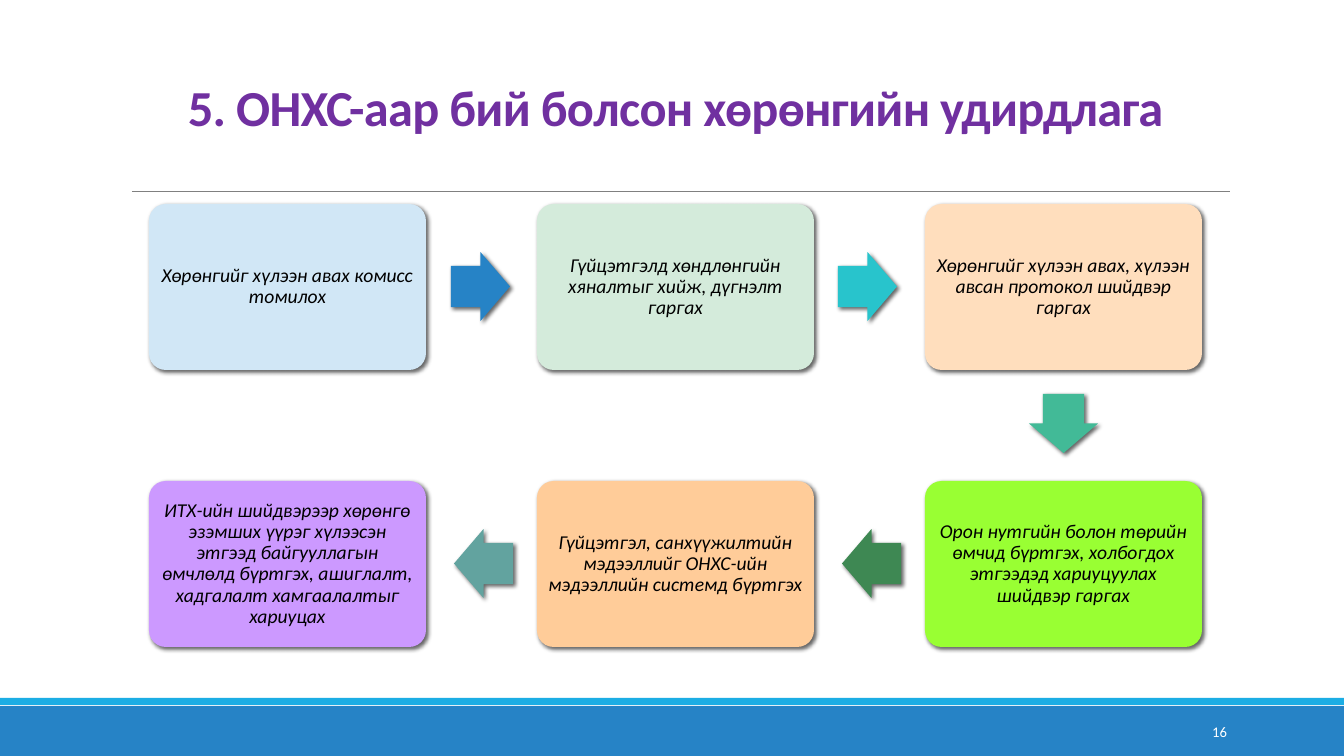
from lxml import etree
from pptx import Presentation
from pptx.dml.color import RGBColor
from pptx.enum.shapes import MSO_CONNECTOR, MSO_SHAPE
from pptx.enum.text import MSO_ANCHOR, PP_ALIGN
from pptx.oxml import parse_xml
from pptx.oxml.ns import nsdecls, qn
from pptx.util import Pt

COLORS = {
    "title": "7030A0", "text": "000000", "number": "FFFFFF",
    "footer": "2683C6", "stripe": "1CADE4", "rule": "808080",
}

# column, row, fill, text
STEPS = [
    (0, 0, "D1E7F6", "Хөрөнгийг хүлээн авах комисс томилох"),
    (1, 0, "D4EBDB", "Гүйцэтгэлд хөндлөнгийн хяналтыг хийж, дүгнэлт гаргах"),
    (2, 0, "FFDEBD", "Хөрөнгийг хүлээн авах, хүлээн авсан протокол шийдвэр гаргах"),
    (2, 1, "99FF33", "Орон нутгийн болон төрийн өмчид бүртгэх, холбогдох этгээдэд "
                     "хариуцуулах шийдвэр гаргах"),
    (1, 1, "FFCC99", "Гүйцэтгэл, санхүүжилтийн мэдээллийг ОНХС-ийн мэдээллийн "
                     "системд бүртгэх"),
    (0, 1, "CC99FF", "ИТХ-ийн шийдвэрээр хөрөнгө эзэмших үүрэг хүлээсэн этгээд "
                     "байгууллагын өмчлөлд бүртгэх, ашиглалт, хадгалалт "
                     "хамгаалалтыг хариуцах"),
]
# left, top, rotation, fill
ARROWS = [
    (451, 252, 0, "2683C6"), (838, 252, 0, "28C4CC"), (1034, 389, 90, "42BA97"),
    (842, 529, 180, "3E8853"), (454, 529, 180, "62A39F"),
]
LEFT, TOP, BOX_W, BOX_H = 149, 204, 277, 166
COL_STEP, ROW_STEP = 388, 277
ARROW_W, ARROW_H = 59, 69


def px(n):
    """Turn pixels, 100.8 to the inch, into EMU."""
    return round(n * 914400 / 100.8)


class SlideBuilder:
    font = "Calibri"

    def __init__(self, slide):
        self.slide = slide

    def shape(self, kind, x, y, w, h, fill, adjustments=(), rotation=0, shadow=False):
        sp = self.slide.shapes.add_shape(kind, px(x), px(y), px(w), px(h))
        sp.fill.solid()
        sp.fill.fore_color.rgb = RGBColor.from_string(fill)
        sp.line.fill.background()
        sp.rotation = rotation
        for i, value in enumerate(adjustments):
            sp.adjustments[i] = value
        sp.shadow.inherit = False
        if shadow:
            effects = sp._element.spPr.find(qn("a:effectLst"))
            effects.append(parse_xml(
                f'<a:outerShdw {nsdecls("a")} blurRad="38100" dist="25400" '
                'dir="2700000" rotWithShape="0"><a:srgbClr val="000000">'
                '<a:alpha val="60000"/></a:srgbClr></a:outerShdw>'))
        return sp

    def set_text(self, sp, text, size, color, align, inset, spacing=1.0,
                 bold=False, italic=False):
        tf = sp.text_frame
        tf.word_wrap = True
        tf.vertical_anchor = MSO_ANCHOR.MIDDLE
        tf.margin_left = tf.margin_right = px(inset)
        tf.margin_top = tf.margin_bottom = px(6)
        p = tf.paragraphs[0]
        p.alignment, p.line_spacing = align, spacing
        p.font.name, p.font.size = self.font, Pt(size)
        p.font.bold, p.font.italic = bold, italic
        p.font.color.rgb = RGBColor.from_string(color)
        r = p.add_run()
        r.text = text
        return r

    def text(self, x, y, w, h, text, size, color, align, **style):
        sp = self.slide.shapes.add_textbox(px(x), px(y), px(w), px(h))
        return self.set_text(sp, text, size, color, align, 9, **style)

    def line(self, x1, y1, x2, y2, color, width):
        cn = self.slide.shapes.add_connector(
            MSO_CONNECTOR.STRAIGHT, px(x1), px(y1), px(x2), px(y2))
        cn.line.color.rgb = RGBColor.from_string(color)
        cn.line.width = Pt(width)
        etree.SubElement(cn._element.spPr, qn("a:effectLst"))

    def step(self, column, row, fill, text):
        sp = self.shape(MSO_SHAPE.ROUNDED_RECTANGLE, LEFT + column * COL_STEP,
                        TOP + row * ROW_STEP, BOX_W, BOX_H, fill, [0.1], shadow=True)
        self.set_text(sp, text, 14, COLORS["text"], PP_ALIGN.CENTER, 6,
                      spacing=0.9, italic=True)

    def arrow(self, x, y, rotation, fill):
        self.shape(MSO_SHAPE.RIGHT_ARROW, x, y, ARROW_W, ARROW_H, fill,
                   [0.6, 0.5], rotation, shadow=True)


def main():
    prs = Presentation()
    prs.slide_width, prs.slide_height = px(1344), px(756)
    s = SlideBuilder(prs.slides.add_slide(prs.slide_layouts[6]))

    s.shape(MSO_SHAPE.RECTANGLE, 0, 706, 1344, 50, COLORS["footer"])
    s.shape(MSO_SHAPE.RECTANGLE, 0, 698, 1344, 7, COLORS["stripe"])
    s.line(132, 191, 1230, 191, COLORS["rule"], 0.5)
    title = s.text(121, 31, 1109, 160, "5. ОНХС-аар бий болсон хөрөнгийн удирдлага",
                   36, COLORS["title"], PP_ALIGN.CENTER, spacing=0.85, bold=True)
    title._r.get_or_add_rPr().set("spc", "-50")

    for step in STEPS:
        s.step(*step)
    for arrow in ARROWS:
        s.arrow(*arrow)
    s.text(1092, 712, 144, 40, "16", 10.5, COLORS["number"], PP_ALIGN.RIGHT)

    prs.save("out.pptx")


if __name__ == "__main__":
    main()
